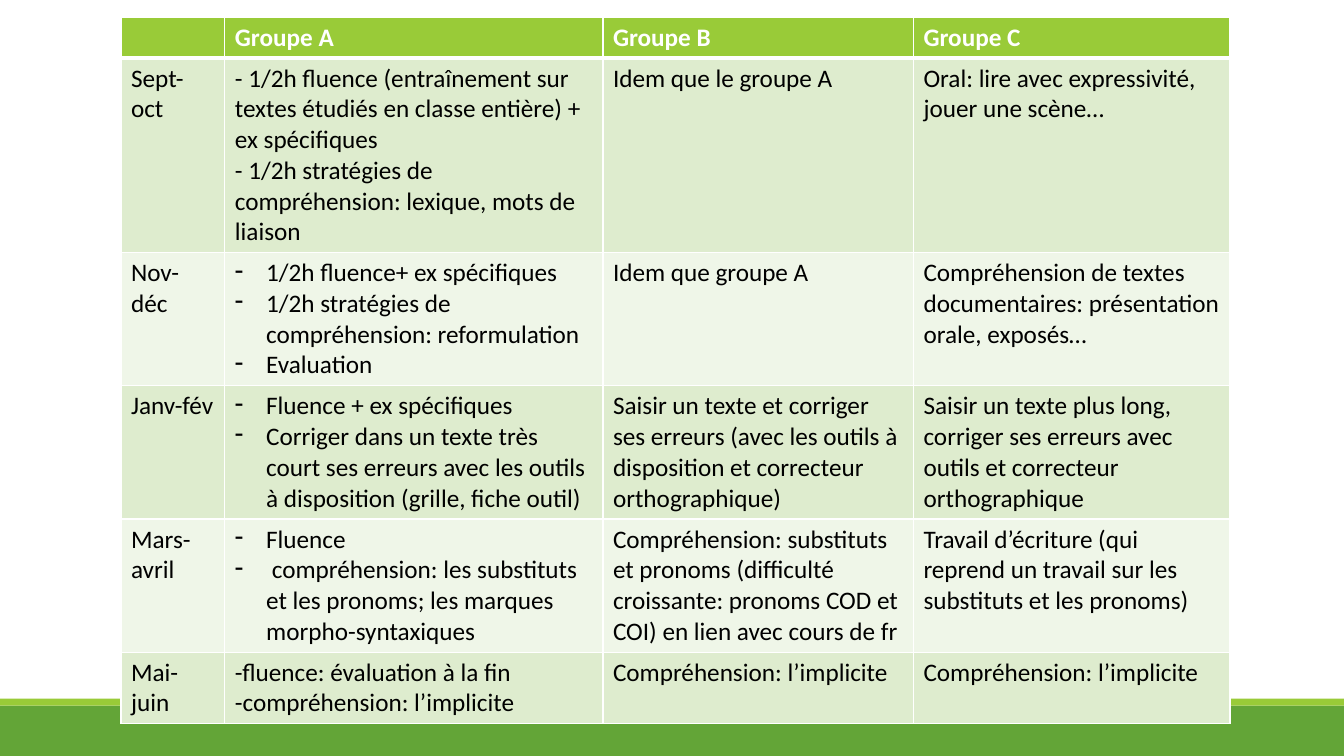
from pptx import Presentation, util as u
from pptx.dml.color import RGBColor
from pptx.enum import shapes
from pptx.oxml.ns import qn
from lxml import etree

WIDTH, HEIGHT = 13.33, 7.5
GREEN, LIME, WHITE, BLACK = "63A537", "99CB38", "FFFFFF", "000000"
BANDS = ("DEECCE", "EFF6E8")
COLUMNS = (1.03, 3.75, 3.08, 3.14)
LINES_PER_ROW = (1, 6, 4, 4, 4, 2)
LINE_HEIGHT, CELL_PADDING, INDENT = 0.305, 0.1, 0.31

HEADER = ("", "Groupe A", "Groupe B", "Groupe C")
PERIODS = (
    ("Sept-oct",
     ("- 1/2h fluence (entraînement sur textes étudiés en classe entière) + ex spécifiques",
      "- 1/2h stratégies de compréhension: lexique, mots de liaison"),
     "Idem que le groupe A",
     "Oral: lire avec expressivité, jouer une scène…"),
    ("Nov-déc",
     ["1/2h fluence+ ex spécifiques",
      "1/2h stratégies de compréhension: reformulation",
      "Evaluation"],
     "Idem que groupe A",
     "Compréhension de textes documentaires: présentation orale, exposés…"),
    ("Janv-fév",
     ["Fluence + ex spécifiques",
      "Corriger dans un texte très court ses erreurs avec les outils à disposition (grille, fiche outil)"],
     "Saisir un texte et corriger ses erreurs (avec les outils à disposition et correcteur orthographique)",
     "Saisir un texte plus long, corriger ses erreurs avec outils et correcteur orthographique"),
    ("Mars-avril",
     ["Fluence",
      " compréhension: les substituts et les pronoms; les marques morpho-syntaxiques"],
     "Compréhension: substituts et pronoms (difficulté croissante: pronoms COD et COI) en lien avec cours de fr",
     "Travail d’écriture (qui reprend un travail sur les substituts et les pronoms)"),
    ("Mai-juin",
     ("-fluence: évaluation à la fin", "-compréhension: l’implicite"),
     "Compréhension: l’implicite",
     "Compréhension: l’implicite"),
)


def color(value):
    """Turn a hex string into a colour."""
    return RGBColor.from_string(value)


def write(tf, content, size=18, font="Calibri", fill=BLACK, bold=False):
    """Write a string, a tuple of paragraphs or a list of dashed items."""
    paragraphs = [content] if isinstance(content, str) else content
    for i, line in enumerate(paragraphs):
        p = tf.paragraphs[0] if i == 0 else tf.add_paragraph()
        p.font.size = u.Pt(size)
        if isinstance(content, list):
            pPr = p._p.get_or_add_pPr()
            pPr.set("marL", str(u.Inches(INDENT)))
            pPr.set("indent", str(-u.Inches(INDENT)))
            bullet = etree.Element(qn("a:buChar"), char="-")
            pPr.insert(0, bullet)
        if line:
            r = p.add_run()
            r.text = line
            r.font.size, r.font.name, r.font.bold = u.Pt(size), font, bold
            r.font.color.rgb = color(fill)


def style_cell(cell, fill, bottom=1, top=1):
    """Give a cell its white borders and its fill."""
    tcPr = cell._tc.get_or_add_tcPr()
    for side, width in (("L", 1), ("R", 1), ("T", top), ("B", bottom)):
        ln = etree.SubElement(tcPr, qn("a:ln" + side), w=str(u.Pt(width)))
        solid = etree.SubElement(ln, qn("a:solidFill"))
        etree.SubElement(solid, qn("a:srgbClr"), val=WHITE)
    cell.fill.solid()
    cell.fill.fore_color.rgb = color(fill)


def add_footer(s, left, top, width, height):
    """Draw the green footer with its lime strip along the top."""
    strip = height / 8
    for y, h, fill in ((top + strip, height - strip, GREEN), (top, strip, LIME)):
        sp = s.shapes.add_shape(shapes.MSO_SHAPE.RECTANGLE, u.Inches(left),
                                u.Inches(y), u.Inches(width), u.Inches(h))
        sp.shadow.inherit = False
        sp.fill.solid()
        sp.fill.fore_color.rgb = color(fill)
        sp.line.fill.background()


def add_schedule(s, left, top):
    """Place the yearly plan, one row per period and one column per group."""
    heights = [n * LINE_HEIGHT + CELL_PADDING for n in LINES_PER_ROW]
    table = s.shapes.add_table(len(heights), len(COLUMNS), u.Inches(left), u.Inches(top),
                               u.Inches(sum(COLUMNS)), u.Inches(sum(heights))).table
    for column, width in zip(table.columns, COLUMNS):
        column.width = u.Inches(width)
    for i, (row, height) in enumerate(zip((HEADER, *PERIODS), heights)):
        table.rows[i].height = u.Inches(height)
        head = i == 0
        for j, content in enumerate(row):
            cell = table.cell(i, j)
            style_cell(cell, LIME if head else BANDS[(i - 1) % 2],
                       bottom=3 if head else 1, top=3 if i == 1 else 1)
            write(cell.text_frame, content, fill=WHITE if head else BLACK, bold=head)


def main():
    """Build the slide and save it."""
    prs = Presentation()
    prs.slide_width, prs.slide_height = u.Inches(WIDTH), u.Inches(HEIGHT)
    s = prs.slides.add_slide(prs.slide_layouts[6])
    s.background.fill.solid()
    s.background.fill.fore_color.rgb = color(WHITE)
    add_footer(s, 0, 6.93, WIDTH, HEIGHT - 6.93)
    add_schedule(s, 1.2, 0.17)
    prs.save("out.pptx")


if __name__ == "__main__":
    main()
